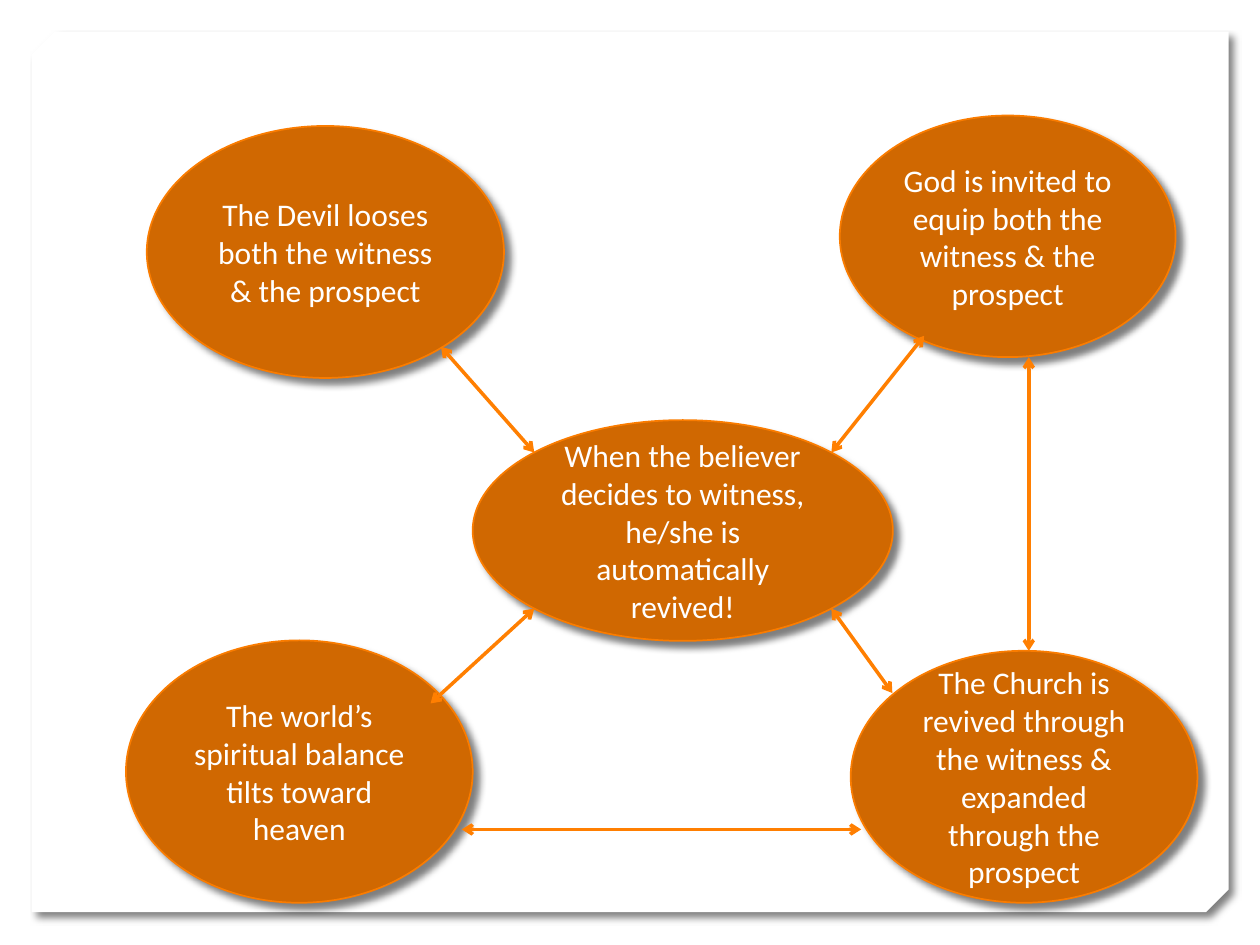
from math import sqrt

from lxml import etree
from pptx import Presentation
from pptx.dml.color import RGBColor
from pptx.enum.shapes import MSO_CONNECTOR, MSO_SHAPE
from pptx.enum.text import MSO_ANCHOR, PP_ALIGN
from pptx.oxml import parse_xml
from pptx.oxml.ns import nsdecls, qn
from pptx.util import Cm, Pt

OVAL = MSO_SHAPE.OVAL
STRAIGHT = MSO_CONNECTOR.STRAIGHT
CENTER = PP_ALIGN.CENTER
MIDDLE = MSO_ANCHOR.MIDDLE

WHITE = RGBColor(0xFF, 0xFF, 0xFF)
RUST = RGBColor(0xD0, 0x68, 0x01)
RIM = RGBColor(0xFA, 0x7C, 0x00)
ORANGE = RGBColor(0xFF, 0x7F, 0x01)

SLIDE_SIZE = (25.4, 19.05)
PANEL_BOX = (0.64, 0.64, 24.77, 18.39)
PANEL_CUT = 0.46

DECISION = ("When the believer decides to witness, he/she is automatically revived!",
            (9.53, 8.47, 8.47, 4.45))
OUTCOMES = [
    ("The world’s spiritual balance tilts toward heaven", (2.54, 12.91, 6.99, 5.29)),
    ("The Church is revived through the witness & expanded through the prospect",
     (17.15, 13.12, 6.99, 5.08)),
    ("God is invited to equip both the witness & the prospect", (16.93, 2.33, 6.77, 4.87)),
    ("The Devil looses both the witness & the prospect", (2.96, 2.54, 7.2, 5.08)),
]
SPOKES = [
    ((1, -1), (18.63, 6.77)),
    ((-1, 1), (8.68, 14.18)),
    ((1, 1), (17.99, 13.97)),
    ((-1, -1), (8.89, 6.99)),
]
OUTER_LINKS = [
    ((20.74, 7.2), (20.74, 13.12)),
    ((17.36, 16.72), (9.31, 16.72)),
]

FONT_FORMAT = {"name": "Calibri", "size": Pt(18)}
FRAME_FORMAT = {"word_wrap": True, "vertical_anchor": MIDDLE}


def lengths(values):
    return [Cm(value) for value in values]


def cast_shadow(shape):
    shape.shadow.inherit = False
    shape._element.spPr.replace(
        shape._element.spPr.find(qn("a:effectLst")),
        parse_xml(
            f'<a:effectLst {nsdecls("a")}>'
            f'<a:outerShdw blurRad="{Pt(4)}" dist="{Pt(5)}" dir="2700000" '
            'algn="tl" rotWithShape="0">'
            '<a:srgbClr val="000000"><a:alpha val="50000"/></a:srgbClr>'
            '</a:outerShdw></a:effectLst>'))


def fill_with(shape, color):
    shape.fill.solid()
    shape.fill.fore_color.rgb = color


def add_panel(shapes):
    left, top, right, bottom = lengths(PANEL_BOX)
    cut = Cm(PANEL_CUT)
    builder = shapes.build_freeform(left, bottom)
    builder.add_line_segments([
        (right - cut, bottom), (right, bottom - cut), (right, top),
        (left + cut, top), (left, top + cut)], close=True)
    panel = builder.convert_to_shape()
    fill_with(panel, WHITE)
    panel.line.fill.background()
    cast_shadow(panel)


def add_bubble(shapes, text, box):
    bubble = shapes.add_shape(OVAL, *lengths(box))
    fill_with(bubble, RUST)
    bubble.line.color.rgb = RIM
    bubble.line.width = Pt(1)
    cast_shadow(bubble)
    frame = bubble.text_frame
    for name, value in FRAME_FORMAT.items():
        setattr(frame, name, value)
    paragraph = frame.paragraphs[0]
    paragraph.text = text
    paragraph.alignment = CENTER
    for name, value in FONT_FORMAT.items():
        setattr(paragraph.font, name, value)
    paragraph.font.color.rgb = WHITE


def add_link(shapes, start, end):
    link = shapes.add_connector(STRAIGHT, *lengths(start + end))
    link.line.color.rgb = ORANGE
    link.line.width = Pt(2)
    for tag in ("a:headEnd", "a:tailEnd"):
        etree.SubElement(link.line._get_or_add_ln(), qn(tag), type="arrow")
    etree.SubElement(link._element.spPr, qn("a:effectLst"))


def rim_point(box, direction):
    left, top, width, height = box
    across, down = direction
    reach = sqrt(0.5) / 2
    return (left + width * (0.5 + across * reach),
            top + height * (0.5 + down * reach))


def main():
    deck = Presentation()
    deck.slide_width, deck.slide_height = lengths(SLIDE_SIZE)
    slide = deck.slides.add_slide(deck.slide_layouts[6])
    slide.background.fill.solid()
    slide.background.fill.fore_color.rgb = WHITE
    add_panel(slide.shapes)
    for text, box in [DECISION] + OUTCOMES:
        add_bubble(slide.shapes, text, box)
    spokes = [(rim_point(DECISION[1], direction), end) for direction, end in SPOKES]
    for start, end in spokes + OUTER_LINKS:
        add_link(slide.shapes, start, end)
    deck.save("out.pptx")


if __name__ == "__main__":
    main()
